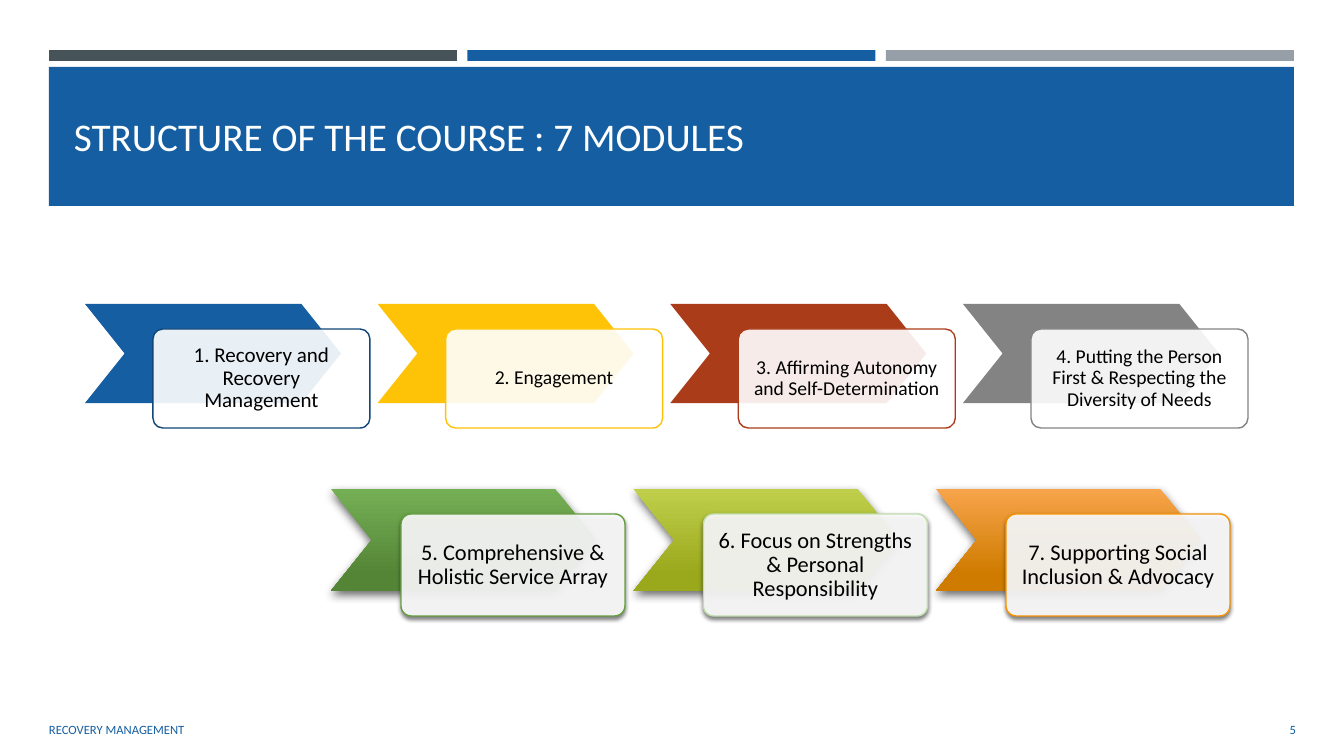
from lxml import etree
from pptx import Presentation
from pptx.dml.color import RGBColor
from pptx.enum.shapes import MSO_SHAPE
from pptx.enum.text import MSO_ANCHOR, PP_ALIGN
from pptx.oxml.ns import qn
from pptx.util import Inches, Pt

RECT, CHEVRON, ROUND = MSO_SHAPE.RECTANGLE, MSO_SHAPE.CHEVRON, MSO_SHAPE.ROUNDED_RECTANGLE
LEFT, CENTER, RIGHT = PP_ALIGN.LEFT, PP_ALIGN.CENTER, PP_ALIGN.RIGHT
MIDDLE = MSO_ANCHOR.MIDDLE

# Content
FONT, BLUE, WHITE, BLACK = "Calibri", "155EA1", "FFFFFF", "000000"
BARS = ["465359", BLUE, "969FA7"]
# text, size, alignment, colour, box
LABELS = [
    ("STRUCTURE OF THE COURSE : 7 MODULES", 28, LEFT, WHITE, (64, 81, 1216, 109)),
    ("RECOVERY MANAGEMENT", 9, LEFT, BLUE, (39, 709, 752, 40)),
    ("5", 9, RIGHT, BLUE, (1190, 709, 116, 40)),
]
# text, size, inset, chevron fill (one colour or top and bottom), card line
FIRST = [
    ("1. Recovery and Recovery Management", 15, 12, [BLUE], "104679"),
    ("2. Engagement", 14, 11, ["FEC306"], "FEC306"),
    ("3. Affirming Autonomy and Self-Determination", 14, 11, ["AB3C19"], "AB3C19"),
    ("4. Putting the Person First & Respecting the Diversity of Needs", 14, 11,
     ["838383"], "838383"),
]
SECOND = [
    ("5. Comprehensive & Holistic Service Array", 16, 12, ["75AF55", "548536"], "649E40"),
    ("6. Focus on Strengths & Personal Responsibility", 16, 12,
     ["C0CF4B", "9AA81C"], "C0DEAD"),
    ("7. Supporting Social Inclusion & Advocacy", 16, 12, ["F7A44B", "CF7B00"], "F69200"),
]
# modules, first left, last left, top, height, chevron width, card width, card shift
ROWS = [
    (FIRST, 85, 963, 304, 99, 256, 217, 68),
    (SECOND, 331, 936, 489, 102, 265, 224, 70),
]
DROP = 25
# opacity %, blur pt, distance pt, angle
DEEP, SOFT = (60, 7, 3, 84), (55, 3, 2, 90)

SCALE = Inches(1) / 100.8


def px(n):
    return round(n * SCALE)


def rgb(code):
    return RGBColor.from_string(code)


def spread(first, last, count):
    return [first + i * (last - first) / (count - 1) for i in range(count)]


def paint(shape, tones):
    fill = shape.fill
    if len(tones) == 1:
        fill.solid()
        fill.fore_color.rgb = rgb(tones[0])
        return
    fill.gradient()
    fill.gradient_angle = 270
    for stop, tone, place in zip(fill.gradient_stops, tones, (0, 0.84)):
        stop.color.rgb = rgb(tone)
        stop.position = place


def shade(shape, look):
    alpha, blur, dist, angle = look
    effects = shape._element.spPr.find(qn("a:effectLst"))
    drop = etree.SubElement(effects, qn("a:outerShdw"), blurRad=str(Pt(blur)),
                            dist=str(Pt(dist)), dir=str(angle * 60000),
                            algn="ctr", rotWithShape="0")
    tone = etree.SubElement(drop, qn("a:srgbClr"), val=BLACK)
    etree.SubElement(tone, qn("a:alpha"), val=str(alpha * 1000))


def add_block(kind, box, tones, edge=None, look=None):
    shape = slide.shapes.add_shape(kind, *map(px, box))
    shape.shadow.inherit = False
    paint(shape, tones)
    if edge:
        shape.line.color.rgb = rgb(edge)
        shape.line.width = Pt(1)
    else:
        shape.line.fill.background()
    if look:
        shade(shape, look)
    return shape


def write(frame, text, size, align, color):
    frame.word_wrap = True
    frame.vertical_anchor = MIDDLE
    para = frame.paragraphs[0]
    para.alignment = align
    run = para.add_run()
    run.text = text
    run.font.name, run.font.size = FONT, Pt(size)
    run.font.color.rgb = rgb(color)
    return para


def add_card(box, text, size, inset, edge, look):
    card = add_block(ROUND, box, [WHITE], edge, look)
    card.adjustments[0] = 0.1
    tone = card._element.spPr.find(qn("a:solidFill"))[0]
    etree.SubElement(tone, qn("a:alpha"), val="90000")
    frame = card.text_frame
    frame.margin_left = frame.margin_right = px(inset)
    frame.margin_top = frame.margin_bottom = px(inset)
    write(frame, text, size, CENTER, BLACK).line_spacing = 0.9


deck = Presentation()
deck.slide_width, deck.slide_height = px(1344), px(756)
slide = deck.slides.add_slide(deck.slide_layouts[6])

# Top bars and banner
for left, color in zip(spread(49, 886, len(BARS)), BARS):
    add_block(RECT, (left, 50, 408, 11), [color])
add_block(RECT, (49, 67, 1245, 139), [BLUE])

# Title and footer
for text, size, align, color, box in LABELS:
    label = slide.shapes.add_textbox(*map(px, box))
    write(label.text_frame, text, size, align, color)

# Modules
for mods, first, last, top, high, wide, span, shift in ROWS:
    for left, mod in zip(spread(first, last, len(mods)), mods):
        text, size, inset, tones, edge = mod
        deep, soft = (DEEP, SOFT) if len(tones) > 1 else (None, None)
        arrow = add_block(CHEVRON, (left, top, wide, high), tones, look=deep)
        arrow.adjustments[0] = 0.4
        add_card((left + shift, top + DROP, span, high), text, size, inset, edge, soft)

deck.save("out.pptx")
